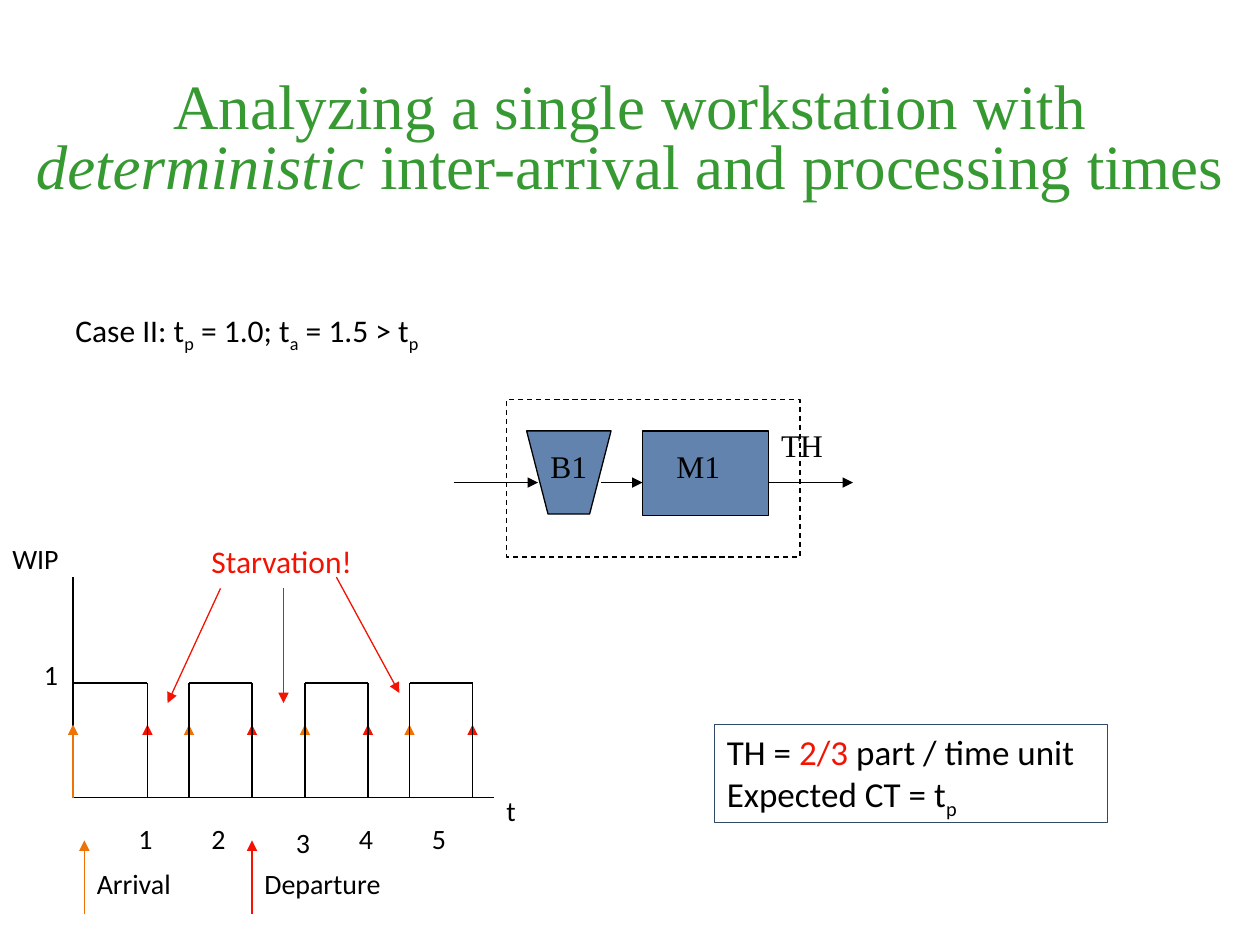
from pptx import Presentation
from pptx.dml.color import RGBColor
from pptx.enum.dml import MSO_LINE
from pptx.enum.shapes import MSO_CONNECTOR, MSO_SHAPE
from pptx.enum.text import MSO_ANCHOR, MSO_AUTO_SIZE, PP_ALIGN
from pptx.oxml.ns import qn
from pptx.util import Inches, Pt
from lxml.etree import SubElement

BLACK = RGBColor(0x00, 0x00, 0x00)
GREEN = RGBColor(0x36, 0x99, 0x31)
BLUE = RGBColor(0x62, 0x83, 0xAD)
NAVY = RGBColor(0x32, 0x49, 0x66)
ORANGE = RGBColor(0xED, 0x73, 0x07)
RED = RGBColor(0xF4, 0x13, 0x02)
SERIF, SANS = "Times New Roman", "Calibri"

# A paragraph is a list of (text, style); style is "", "i", "sub" or "red".
TITLE = [[("Analyzing a single workstation with ", ""), ("deterministic", "i"),
          (" inter-arrival and processing times", "")]]
CASE = [[("Case II: t", ""), ("p", "sub"), (" = 1.0; t", ""), ("a", "sub"),
         (" = 1.5 > t", ""), ("p", "sub")]]
RESULT = [[("TH = ", ""), ("2/3", "red"), (" part / time unit", "")],
          [("Expected CT = t", ""), ("p", "sub")]]

# Labels: text, left, top, width
STATION_LABELS = [("TH", 6.1, 3.33, 0.65), ("B1", 4.27, 3.5, 0.59),
                  ("M1", 5.27, 3.5, 0.66)]
CHART_LABELS = [("WIP", 0, 4.25, 0.64), ("t", 3.92, 6.25, 0.3), ("1", 0.25, 5.17, 0.32),
                ("1", 1, 6.47, 0.32), ("2", 1.58, 6.47, 0.32), ("3", 2.25, 6.5, 0.32),
                ("4", 2.75, 6.47, 0.32), ("5", 3.33, 6.47, 0.32)]
LEGEND = [("Arrival", 0.67, 0.83, ORANGE), ("Departure", 2, 1.19, RED)]

FLOW_Y = 3.83
FLOWS = [(3.6, 4.27), (4.77, 5.1), (6.1, 6.77)]
BUFFER = [(4.18, 3.42), (4.35, 4.08), (4.68, 4.08), (4.85, 3.42)]

AXIS_X, AXIS_Y, AXIS_TOP, AXIS_END = 0.58, 6.33, 4.58, 3.92
LEVEL_Y, EVENT_Y = 5.42, 5.75
JOBS = [(AXIS_X, 1.17), (1.5, 2), (2.42, 2.92), (3.25, 3.75)]  # arrival, departure
STARVATION = [(1.75, 4.67, 1.33, 5.58), (2.25, 4.67, 2.25, 5.58), (2.67, 4.58, 3.17, 5.5)]

prs = Presentation()
prs.slide_width, prs.slide_height = Inches(10), Inches(7.5)
shapes = prs.slides.add_slide(prs.slide_layouts[6]).shapes


def write(tf, paragraphs, size, font, color):
    for i, runs in enumerate(paragraphs):
        p = tf.add_paragraph() if i else tf.paragraphs[0]
        p.alignment = PP_ALIGN.LEFT
        for text, style in runs:
            r = p.add_run()
            r.text = text
            r.font.size, r.font.name = Pt(size), font
            r.font.color.rgb = RED if style == "red" else color
            if style == "i":
                r.font.italic = True
            if style == "sub":
                r.font._element.set("baseline", "-25000")


def add_text(paragraphs, x, y, w, h, size, font=SANS, color=BLACK):
    if isinstance(paragraphs, str):
        paragraphs = [[(paragraphs, "")]]
    tf = shapes.add_textbox(Inches(x), Inches(y), Inches(w), Inches(h)).text_frame
    tf.word_wrap = False
    tf.auto_size = MSO_AUTO_SIZE.SHAPE_TO_FIT_TEXT
    write(tf, paragraphs, size, font, color)
    return tf


def outline(sp, fill=None, line=BLACK):
    sp.shadow.inherit = False
    if fill is None:
        sp.fill.background()
    else:
        sp.fill.solid()
        sp.fill.fore_color.rgb = fill
    sp.line.color.rgb = line
    sp.line.width = Pt(0.75)


def add_box(x, y, w, h, fill=None, line=BLACK):
    sp = shapes.add_shape(MSO_SHAPE.RECTANGLE, Inches(x), Inches(y), Inches(w), Inches(h))
    outline(sp, fill, line)
    return sp


def add_line(x1, y1, x2, y2, color=BLACK, arrow=False):
    line = shapes.add_connector(MSO_CONNECTOR.STRAIGHT, Inches(x1), Inches(y1),
                                Inches(x2), Inches(y2))
    line.line.color.rgb = color
    line.line.width = Pt(0.75)
    if arrow:
        SubElement(line.line._get_or_add_ln(), qn("a:tailEnd"), type="triangle")
    SubElement(line._element.spPr, qn("a:effectLst"))


# Title and case
title = add_text(TITLE, 0, 0.33, 10, 1.58, 36, SERIF, GREEN)
title.word_wrap = True
title.auto_size = MSO_AUTO_SIZE.NONE
title.vertical_anchor = MSO_ANCHOR.MIDDLE
title.paragraphs[0].alignment = PP_ALIGN.CENTER
title.paragraphs[0].line_spacing = 0.8
add_text(CASE, 0.5, 2.42, 4.34, 0.5, 18)

# Workstation: buffer and machine
add_box(5.1, 3.42, 1, 0.67, BLUE)
corners = [(Inches(x), Inches(y)) for x, y in BUFFER]
builder = shapes.build_freeform(*corners[0])
builder.add_line_segments(corners[1:], close=True)
outline(builder.convert_to_shape(), BLUE)
add_box(4.02, 3.17, 2.33, 1.25).line.dash_style = MSO_LINE.DASH
for start, end in FLOWS:
    add_line(start, FLOW_Y, end, FLOW_Y, arrow=True)
for text, x, y, w in STATION_LABELS:
    add_text(text, x, y, w, 0.5, 18, SERIF)

# WIP over time
add_line(AXIS_X, AXIS_Y, AXIS_END, AXIS_Y)
add_line(AXIS_X, AXIS_Y, AXIS_X, AXIS_TOP)
for arrival, departure in JOBS:
    add_line(arrival, AXIS_Y, arrival, EVENT_Y, ORANGE, arrow=True)
    add_line(departure, AXIS_Y, departure, EVENT_Y, RED, arrow=True)
for arrival, departure in JOBS:
    if arrival > AXIS_X:
        add_line(arrival, AXIS_Y, arrival, LEVEL_Y)
    add_line(arrival, LEVEL_Y, departure, LEVEL_Y)
    add_line(departure, LEVEL_Y, departure, AXIS_Y)
for text, x, y, w in CHART_LABELS:
    add_text(text, x, y, w, 0.37, 16)
for text, x, w, color in LEGEND:
    add_line(x, 7.25, x, 6.67, color, arrow=True)
    add_text(text, x, 6.83, w, 0.37, 16)
add_text("Starvation!", 1.58, 4.25, 1.4, 0.4, 18, color=RED)
for ends in STARVATION:
    add_line(*ends, RED, arrow=True)

# Result
tf = add_box(5.67, 5.75, 3.12, 0.78, line=NAVY).text_frame
tf.word_wrap = False
tf.vertical_anchor = MSO_ANCHOR.TOP
write(tf, RESULT, 20, SANS, BLACK)

prs.save("out.pptx")
